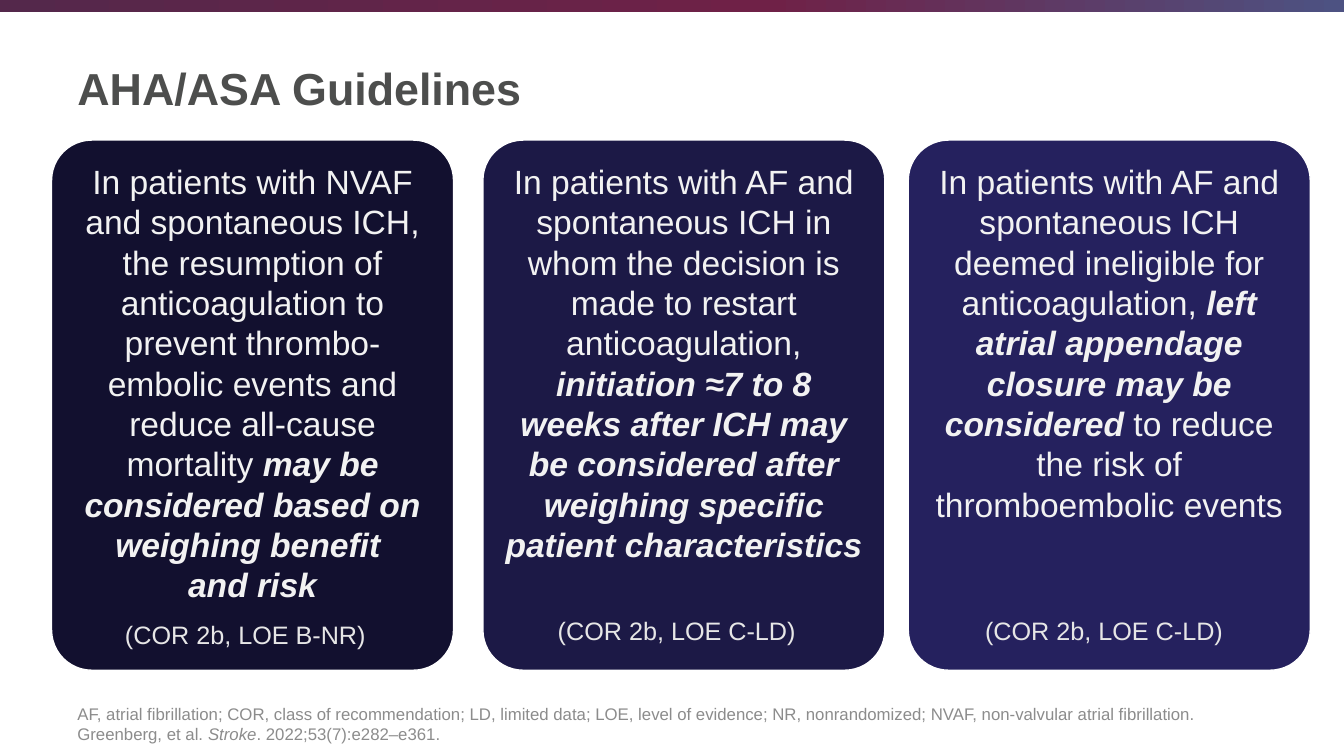
from copy import deepcopy
from pptx import Presentation
from pptx.dml.color import RGBColor
from pptx.enum.shapes import MSO_SHAPE
from pptx.enum.text import MSO_ANCHOR, PP_ALIGN
from pptx.util import Cm, Pt

# Each card: left, fill, runs as (text, style), grade, grade top
CARDS = [
    (1.3, "12102F", [
        ("In patients with NVAF and spontaneous ICH, the resumption of "
         "anticoagulation to prevent thrombo-embolic events and reduce "
         "all-cause mortality ", ""),
        ("may be considered based on weighing benefit \vand risk", "bi")],
     1.98, 15.49, "(COR 2b, LOE B-NR)"),
    (12.17, "1C1946", [
        ("In patients with AF and spontaneous ICH in whom the decision is "
         "made to restart anticoagulation, ", ""),
        ("initiation ≈7 to 8 weeks after ICH may be considered after "
         "weighing specific patient characteristics", "bi")],
     12.85, 15.39, "(COR 2b, LOE C-LD)"),
    (22.89, "25215E", [
        ("In patients with AF and spontaneous ICH deemed ineligible for "
         "anticoagulation, ", ""),
        ("left atrial appendage closure may be considered ", "bi"),
        ("to reduce the risk of thromboembolic events", "")],
     23.62, 15.39, "(COR 2b, LOE C-LD)"),
]
NOTE = [
    ("AF, atrial fibrillation; COR, class of recommendation; LD, limited "
     "data; LOE, level of evidence; NR, nonrandomized; NVAF, non-valvular "
     "atrial fibrillation. Greenberg, et al. ", ""),
    ("Stroke", "i"),
    (". 2022;53(7):e282–e361.", ""),
]


def rgb(code):
    return RGBColor.from_string(code)


def write(frame, runs, size, color, anchor=MSO_ANCHOR.TOP,
          align=PP_ALIGN.LEFT):
    """Fill a frame with one paragraph of styled runs."""
    frame.word_wrap = True
    frame.vertical_anchor = anchor
    para = frame.paragraphs[0]
    para.alignment = align
    for text, style in runs:
        for i, part in enumerate(text.split("\v")):
            if i:
                para.add_line_break()
            run = para.add_run()
            run.text = part
            font = run.font
            font.name, font.size = "Arial", Pt(size)
            font.bold, font.italic = "b" in style, "i" in style
            font.color.rgb = rgb(color)
    return para


def add_text(slide, box, *args):
    frame = slide.shapes.add_textbox(*map(Cm, box)).text_frame
    write(frame, *args)


def add_band(slide, width, stops):
    band = slide.shapes.add_shape(MSO_SHAPE.RECTANGLE, 0, 0, width, Cm(0.3))
    band.shadow.inherit = False
    band.line.fill.background()
    fill = band.fill
    fill.gradient()
    fill.gradient_angle = 0
    # A new gradient has two stops; add the third
    first = fill._fill._gradFill.gsLst[0]
    first.addnext(deepcopy(first))
    for stop, (place, color) in zip(fill.gradient_stops, stops):
        stop.position = place
        stop.color.rgb = rgb(color)


def add_card(slide, left, color, runs):
    card = slide.shapes.add_shape(MSO_SHAPE.ROUNDED_RECTANGLE, Cm(left),
                                  Cm(3.53), Cm(10.13), Cm(13.36))
    card.adjustments[0] = 0.1
    card.shadow.inherit = False
    card.fill.solid()
    card.fill.fore_color.rgb = rgb(color)
    card.line.color.rgb = rgb("FFFFFF")
    card.line.width = Pt(1)
    frame = card.text_frame
    frame.margin_left = frame.margin_right = Cm(0.23)
    frame.margin_top = frame.margin_bottom = Cm(0.23)
    write(frame, runs, 24, "F2F2F2", MSO_ANCHOR.TOP, PP_ALIGN.CENTER)


def main():
    deck = Presentation()
    deck.slide_width, deck.slide_height = Cm(33.87), Cm(19.05)
    slide = deck.slides.add_slide(deck.slide_layouts[6])

    # Top band and title
    add_band(slide, deck.slide_width,
             [(0, "54284B"), (0.57, "6F2147"), (1, "4D5282")])
    add_text(slide, (1.7, 0.56, 29.85, 3.3), [("AHA/ASA Guidelines", "b")],
             32, "4D4E4D", MSO_ANCHOR.MIDDLE)

    # Guideline cards with their grades
    for left, color, runs, x, y, grade in CARDS:
        add_card(slide, left, color, runs)
        add_text(slide, (x, y, 8.41, 1.02), [(grade, "")], 18, "E6E6E6",
                 MSO_ANCHOR.TOP, PP_ALIGN.CENTER)

    # Footnote
    add_text(slide, (1.7, 17.65, 29.85, 1.22), NOTE, 12, "8C8C8C",
             MSO_ANCHOR.BOTTOM)
    deck.save("out.pptx")


if __name__ == "__main__":
    main()
